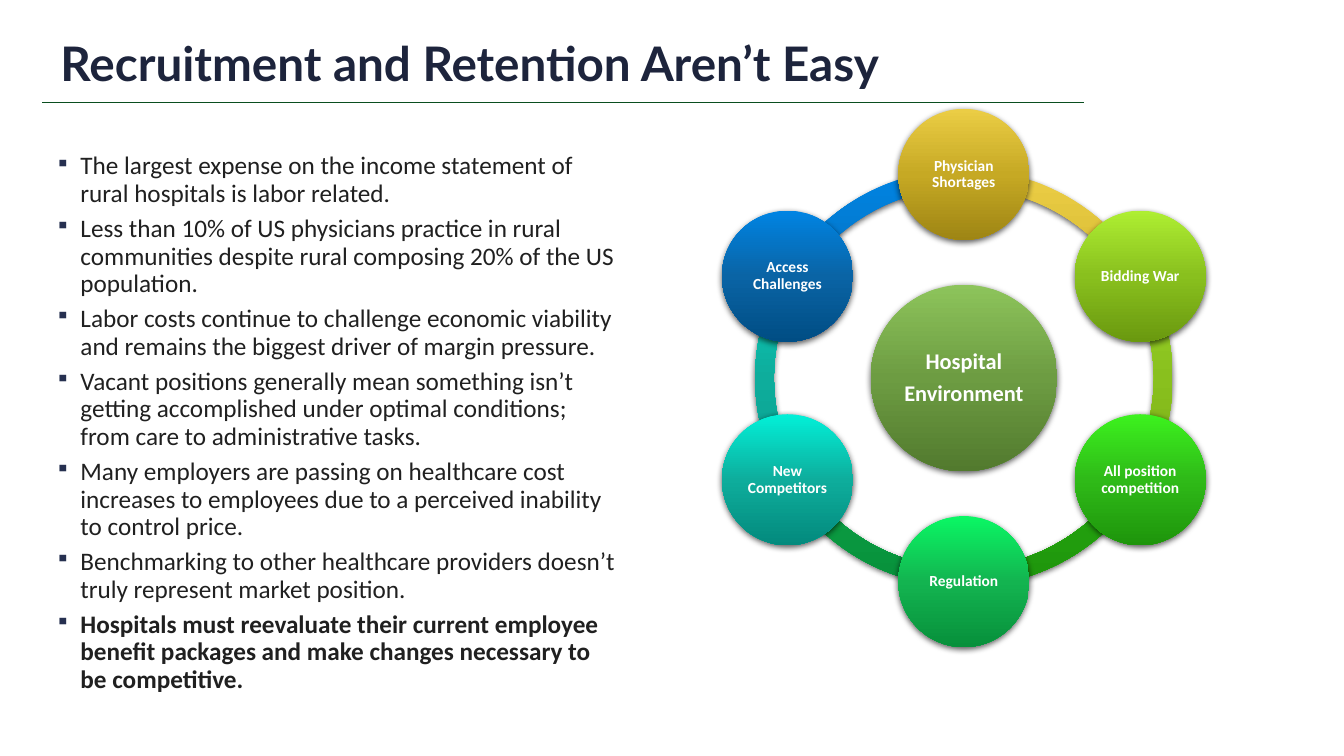
from math import cos, radians, sin

from lxml import etree
from pptx import Presentation
from pptx.dml.color import RGBColor
from pptx.enum.shapes import MSO_CONNECTOR, MSO_SHAPE
from pptx.enum.text import MSO_ANCHOR, PP_ALIGN
from pptx.oxml import parse_xml
from pptx.oxml.ns import nsdecls, qn
from pptx.util import Inches, Pt

ARC, OVAL = MSO_SHAPE.BLOCK_ARC, MSO_SHAPE.OVAL
MIDDLE, BOTTOM = MSO_ANCHOR.MIDDLE, MSO_ANCHOR.BOTTOM
LEFT, CENTER = PP_ALIGN.LEFT, PP_ALIGN.CENTER
STRAIGHT = MSO_CONNECTOR.STRAIGHT

MID_X, MID_Y = 9.56, 3.75
ORBIT = 2.02

NODES = [
    ("Physician Shortages", ("EBCD45", "C6A924", "9E8514")),
    ("Bidding War", ("AEEE32", "89C01E", "6A990F")),
    ("All position competition", ("3CF21E", "2FBA18", "1E950B")),
    ("Regulation", ("0AF764", "13B450", "07903B")),
    ("New Competitors", ("02F0D8", "0EAD9C", "038A7D")),
    ("Access Challenges", ("0084E3", "0A64A5", "004D84")),
]
HUB = ("Hospital\nEnvironment", ("8DC45B", "6D9C42", "527A2E"))

POINTS = [
    "The largest expense on the income statement of rural hospitals is labor related.",
    "Less than 10% of US physicians practice in rural communities despite rural composing 20% of the US population.",
    "Labor costs continue to challenge economic viability and remains the biggest driver of margin pressure.",
    "Vacant positions generally mean something isn’t getting accomplished under optimal conditions; from care to administrative tasks.",
    "Many employers are passing on healthcare cost increases to employees due to a perceived inability to control price.",
    "Benchmarking to other healthcare providers doesn’t truly represent market position.",
    "Hospitals must reevaluate their current employee benefit packages and make changes necessary to be competitive.",
]


def style(para, face, size, color, bold, after=0):
    """Set the font and spacing of one paragraph."""
    para.line_spacing = 0.9
    para.space_before = Pt(0)
    para.space_after = Pt(after)
    for run in para.runs:
        run.font.name = face
        run.font.size = Pt(size)
        run.font.bold = bold
        run.font.color.rgb = RGBColor.from_string(color)


def add_disc(kind, x, y, size, colors):
    """Add a shape centred on x, y with a downward gradient and soft shadow."""
    disc = slide.shapes.add_shape(
        kind, Inches(x - size / 2), Inches(y - size / 2), Inches(size), Inches(size))
    stops = "".join(
        f'<a:gs pos="{i * 50000}"><a:srgbClr val="{color}"/></a:gs>'
        for i, color in enumerate(colors))
    props = disc._element.spPr
    props.append(parse_xml(
        f'<a:gradFill {nsdecls("a")} rotWithShape="1"><a:gsLst>{stops}</a:gsLst>'
        '<a:lin ang="5400000" scaled="0"/></a:gradFill>'))
    disc.line.fill.background()
    props.append(parse_xml(
        f'<a:effectLst {nsdecls("a")}><a:outerShdw blurRad="57150" dist="19050" '
        'dir="5400000" algn="ctr" rotWithShape="0"><a:srgbClr val="000000">'
        '<a:alpha val="63000"/></a:srgbClr></a:outerShdw></a:effectLst>'))
    return disc


deck = Presentation()
deck.slide_width, deck.slide_height = Inches(13.33), Inches(7.5)
slide = deck.slides.add_slide(deck.slide_layouts[5])

# Title and rule
title = slide.shapes.title
title.left, title.top = Inches(0.5), Inches(0.3)
title.width, title.height = Inches(10.4), Inches(0.66)
frame = title.text_frame
frame.text = "Recruitment and Retention Aren’t Easy"
frame.vertical_anchor = BOTTOM
frame.paragraphs[0].alignment = LEFT
style(frame.paragraphs[0], "Lato", 34, "1D243C", True)

rule = slide.shapes.add_connector(
    STRAIGHT, Inches(0.42), Inches(1.02), Inches(10.75), Inches(1.02))
rule.line.color.rgb = RGBColor.from_string("0A4E1F")
rule.line.width = Pt(1)
etree.SubElement(rule._element.spPr, qn("a:effectLst"))

# Bullet list
body = slide.shapes.add_textbox(Inches(0.45), Inches(1.47), Inches(5.8), Inches(5.42))
frame = body.text_frame
frame.word_wrap = True
frame.text = "\n".join(POINTS)
for para in frame.paragraphs:
    props = para._p.get_or_add_pPr()
    props.set("marL", str(Inches(0.25)))
    props.set("indent", str(Inches(-0.25)))
    tint = etree.SubElement(props, qn("a:buClr"))
    etree.SubElement(tint, qn("a:srgbClr"), val="263050")
    etree.SubElement(props, qn("a:buSzPct"), val="80000")
    etree.SubElement(props, qn("a:buChar"), char="▪")
    style(para, "Calibri", 18, "202020", para.text == POINTS[-1], 6)

# Ring: one arc of 60 degrees after each node, 36 adjustment units out of 216
for i in reversed(range(len(NODES))):
    arc = add_disc(ARC, MID_X, MID_Y, 4.14, NODES[i][1])
    arc.adjustments[0] = (162 + 36 * i) % 216
    arc.adjustments[1] = (198 + 36 * i) % 216
    arc.adjustments[2] = 0.045

# Hub and nodes
discs = [(*HUB, MID_X, MID_Y, 1.85, 16)]
for i, (label, colors) in enumerate(NODES):
    turn = radians(60 * i)
    discs.append((label, colors, MID_X + ORBIT * sin(turn),
                  MID_Y - ORBIT * cos(turn), 1.3, 11))

for label, colors, x, y, width, size in discs:
    frame = add_disc(OVAL, x, y, width, colors).text_frame
    frame.margin_left = frame.margin_right = Inches(0.02)
    frame.margin_top = frame.margin_bottom = Inches(0.02)
    frame.vertical_anchor = MIDDLE
    frame.word_wrap = True
    frame.text = label
    for para in frame.paragraphs:
        para.alignment = CENTER
        style(para, "Calibri", size, "FFFFFF", True, size * 0.35)

deck.save("out.pptx")
